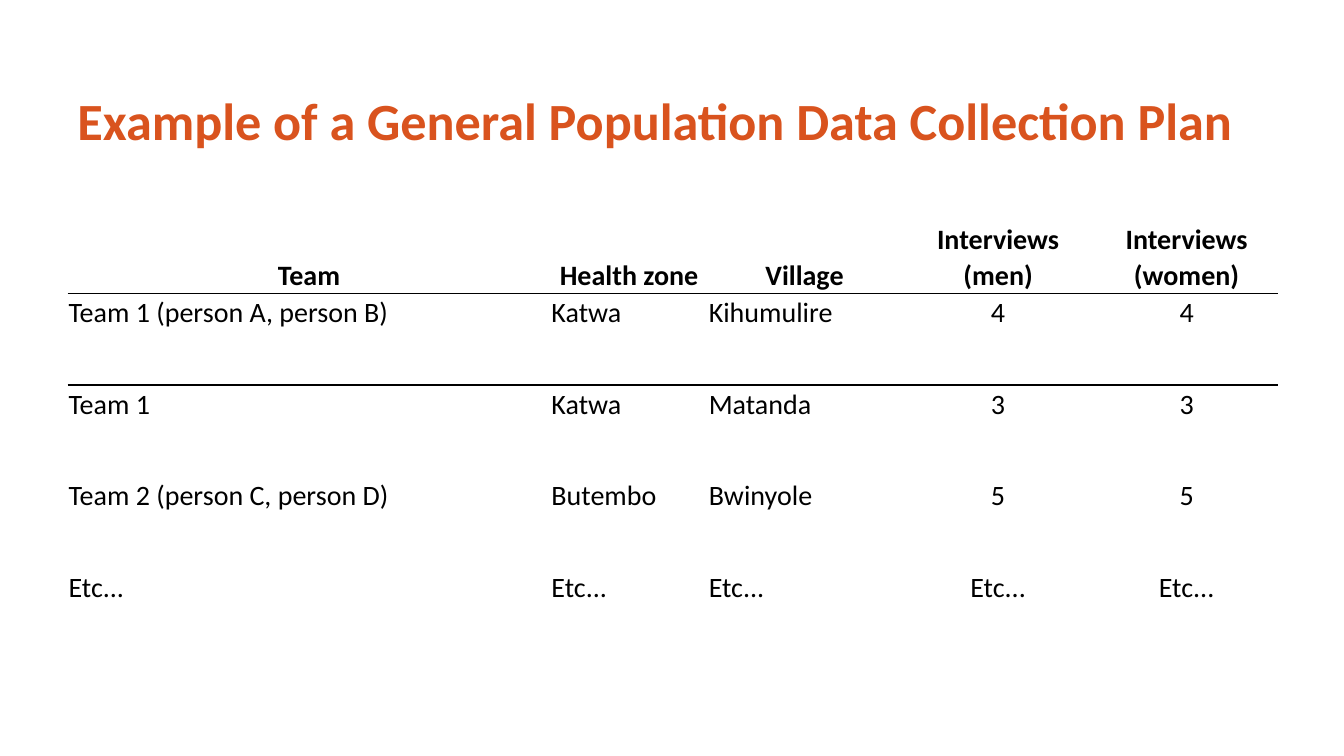
from dataclasses import dataclass

from lxml import etree
from pptx import Presentation
from pptx.dml.color import RGBColor
from pptx.enum.text import MSO_ANCHOR, PP_ALIGN
from pptx.oxml.ns import qn
from pptx.util import Inches, Pt

ORANGE = RGBColor(0xD9, 0x53, 0x1E)
BLACK = RGBColor(0, 0, 0)
LEFT, CENTER = PP_ALIGN.LEFT, PP_ALIGN.CENTER
TOP, BOTTOM = MSO_ANCHOR.TOP, MSO_ANCHOR.BOTTOM
FONT = "Calibri"
NO_STYLE = "{2D5ABB26-0587-4C30-8999-92F81FD0307C}"
ROW_HEIGHT = 0.91


@dataclass(frozen=True)
class Column:
    heading: str
    width: float
    align: PP_ALIGN
    values: tuple[str, ...]


COLUMNS = [
    Column("Team", 4.79, LEFT,
           ("Team 1 (person A, person B)", "Team 1", "Team 2 (person C, person D)", "Etc...")),
    Column("Health zone", 1.56, LEFT, ("Katwa", "Katwa", "Butembo", "Etc...")),
    Column("Village", 1.92, LEFT, ("Kihumulire", "Matanda", "Bwinyole", "Etc...")),
    Column("Interviews (men)", 1.92, CENTER, ("4", "3", "5", "Etc...")),
    Column("Interviews (women)", 1.82, CENTER, ("4", "3", "5", "Etc...")),
]


def write_text(tf, text: str, *, size: float, color: RGBColor = BLACK,
               bold: bool = False, align: PP_ALIGN = LEFT,
               spacing=1.07, after: float = 0) -> None:
    tf.word_wrap = True
    p = tf.paragraphs[0]
    p.alignment = align
    p.line_spacing = spacing
    p.space_after = Pt(after)
    r = p.add_run()
    r.text = text
    r.font.name = FONT
    r.font.size = Pt(size)
    r.font.bold = bold
    r.font.color.rgb = color


def add_border(cell, side: str) -> None:
    ln = etree.SubElement(cell._tc.get_or_add_tcPr(), qn(f"a:{side}"), w=str(Pt(1)))
    fill = etree.SubElement(ln, qn("a:solidFill"))
    etree.SubElement(fill, qn("a:srgbClr"), val=str(BLACK))


def fill_cell(cell, text: str, row: int, align: PP_ALIGN) -> None:
    heading = row == 0
    cell.margin_left = cell.margin_right = Inches(0.01)
    cell.margin_top = cell.margin_bottom = 0
    cell.vertical_anchor = BOTTOM if heading else TOP
    if row < 2:
        add_border(cell, "lnB" if heading else "lnT")
    cell.fill.background()
    write_text(cell.text_frame, text, size=20, bold=heading,
               align=CENTER if heading else align, after=8)


def add_title(s) -> None:
    sp = s.shapes.add_textbox(Inches(0.67), Inches(0.3), Inches(12), Inches(1.25))
    tf = sp.text_frame
    tf.vertical_anchor = BOTTOM
    write_text(tf, "Example of a General Population Data Collection Plan",
               size=37.3, color=ORANGE, bold=True, spacing=Pt(40))


def add_plan(s) -> None:
    n_rows = len(COLUMNS[0].values) + 1
    table = s.shapes.add_table(n_rows, len(COLUMNS), Inches(0.67), Inches(2),
                               Inches(12), Inches(ROW_HEIGHT * n_rows)).table
    table.first_row = table.horz_banding = False
    table._tbl.tblPr.find(qn("a:tableStyleId")).text = NO_STYLE
    for row in table.rows:
        row.height = Inches(ROW_HEIGHT)
    for i, column in enumerate(COLUMNS):
        table.columns[i].width = Inches(column.width)
        for j, text in enumerate((column.heading, *column.values)):
            fill_cell(table.cell(j, i), text, j, column.align)


def main() -> None:
    prs = Presentation()
    prs.slide_width, prs.slide_height = Inches(13.33), Inches(7.5)
    s = prs.slides.add_slide(prs.slide_layouts[6])
    add_title(s)
    add_plan(s)
    prs.save("out.pptx")


if __name__ == "__main__":
    main()
